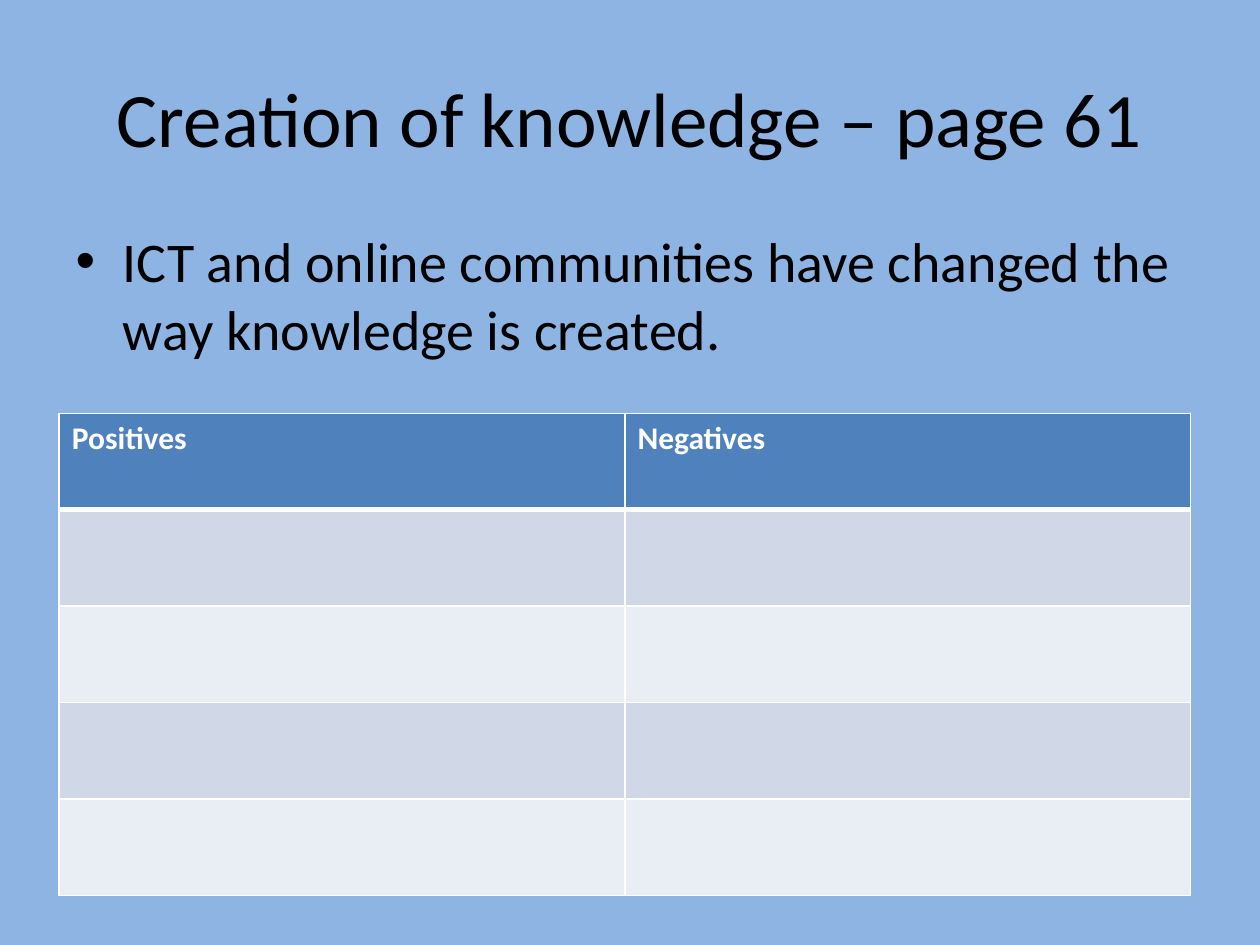
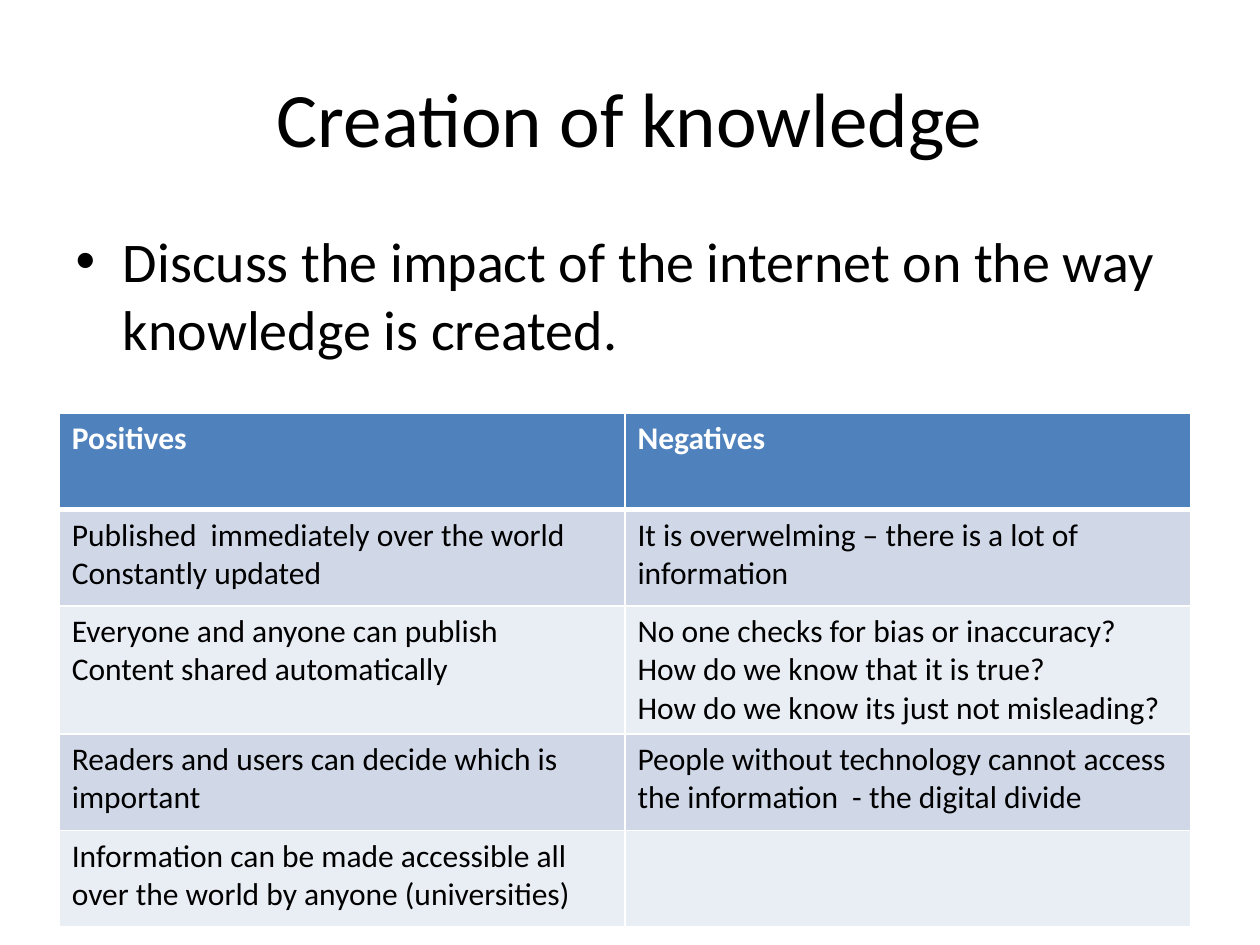
from dataclasses import dataclass

from lxml.etree import SubElement
from pptx import Presentation
from pptx.dml.color import RGBColor as Color
from pptx.enum.text import MSO_ANCHOR as Anchor, PP_ALIGN as Align
from pptx.oxml.ns import qn
from pptx.util import Emu, Inches, Pt


@dataclass(frozen=True)
class Theme:
    """Colours, font and type sizes shared by the slides."""
    font: str = "Calibri"
    ink: str = "000000"
    white: str = "FFFFFF"
    sky: str = "8EB4E3"
    header: str = "4F81BD"
    bands: tuple = ("D0D8E8", "E9EDF4")
    title_size: int = 44
    body_size: int = 32
    cell_size: int = 18
    rule: int = 1
    header_rule: int = 3


class SlideBuilder:
    """Builds slides on a grid of 100 columns and 75 rows."""
    COLUMNS, ROWS = 100, 75

    def __init__(self, deck, theme):
        """Keep the deck, the theme and the grid unit sizes."""
        self.deck, self.theme = deck, theme
        self.column = deck.slide_width / self.COLUMNS
        self.row = deck.slide_height / self.ROWS
        self.slide = None

    def start(self, background):
        """Add a title and content slide with a plain background."""
        self.slide = self.deck.slides.add_slide(self.deck.slide_layouts[1])
        fill = self.slide.background.fill
        fill.solid()
        fill.fore_color.rgb = Color.from_string(background)

    def area(self, left, top, width, height):
        """Turn grid units into lengths."""
        return (Emu(round(left * self.column)), Emu(round(top * self.row)),
                Emu(round(width * self.column)), Emu(round(height * self.row)))

    def style(self, frame, size, color, bold=False):
        """Format every run of a text frame."""
        for para in frame.paragraphs:
            for span in para.runs:
                font = span.font
                font.name, font.size, font.bold = self.theme.font, Pt(size), bold
                font.color.rgb = Color.from_string(color)

    def place(self, box, text, size, *area):
        """Move a placeholder and give it formatted text."""
        box.left, box.top, box.width, box.height = self.area(*area)
        box.text_frame.text = text
        self.style(box.text_frame, size, self.theme.ink)

    def title(self, text):
        """Write the centred slide title."""
        box = self.slide.shapes.title
        self.place(box, text, self.theme.title_size, 5, 3, 90, 12.5)
        box.text_frame.vertical_anchor = Anchor.MIDDLE
        box.text_frame.paragraphs[0].alignment = Align.CENTER

    def bullet(self, text, height):
        """Write the bulleted statement under the title."""
        box = self.slide.placeholders[1]
        self.place(box, text, self.theme.body_size, 5, 17.5, 90, height)

    def borders(self, cell, bottom):
        """Draw white rules around a cell."""
        properties = cell._tc.get_or_add_tcPr()
        rule = self.theme.rule
        for side, width in zip("LRTB", (rule, rule, rule, bottom)):
            line = SubElement(properties, qn(f"a:ln{side}"), w=str(Pt(width)))
            fill = SubElement(line, qn("a:solidFill"))
            SubElement(fill, qn("a:srgbClr"), val=self.theme.white)

    def table(self, rows):
        """Add the two-column table with a header and banded rows."""
        theme = self.theme
        frame = self.slide.shapes.add_table(
            len(rows), len(rows[0]), *self.area(4.7, 32.8, 89.8, 38.3))
        for number, texts in enumerate(rows):
            is_header = number == 0
            shade = theme.header if is_header else theme.bands[(number - 1) % 2]
            for position, text in enumerate(texts):
                cell = frame.table.cell(number, position)
                cell.text_frame.text = text
                self.style(cell.text_frame, theme.cell_size,
                           theme.white if is_header else theme.ink, is_header)
                self.borders(cell, theme.header_rule if is_header else theme.rule)
                cell.fill.solid()
                cell.fill.fore_color.rgb = Color.from_string(shade)


HEADINGS = ("Positives", "Negatives")
EMPTY_ROWS = [("", "")] * 4
ANSWERS = [
    ("Published  immediately over the world\nConstantly updated",
     "It is overwelming – there is a lot of information"),
    ("Everyone and anyone can publish\nContent shared automatically",
     "No one checks for bias or inaccuracy?\nHow do we know that it is true?\n"
     "How do we know its just not misleading?"),
    ("Readers and users can decide which is important",
     "People without technology cannot access the information  - the digital divide"),
    ("Information can be made accessible all over the world by anyone (universities)",
     ""),
]


def main():
    """Build and save the two slides."""
    deck = Presentation()
    deck.slide_width, deck.slide_height = Inches(10), Inches(7.5)
    theme = Theme()
    builder = SlideBuilder(deck, theme)
    pages = [
        (theme.sky, "Creation of knowledge – page 61",
         "ICT and online communities have changed the way knowledge is created.",
         49.5, EMPTY_ROWS),
        (theme.white, "Creation of knowledge",
         "Discuss the impact of the internet on the way knowledge is created.",
         13, ANSWERS),
    ]
    for background, title, statement, height, rows in pages:
        builder.start(background)
        builder.title(title)
        builder.bullet(statement, height)
        builder.table([HEADINGS, *rows])
    deck.save("out.pptx")


if __name__ == "__main__":
    main()
